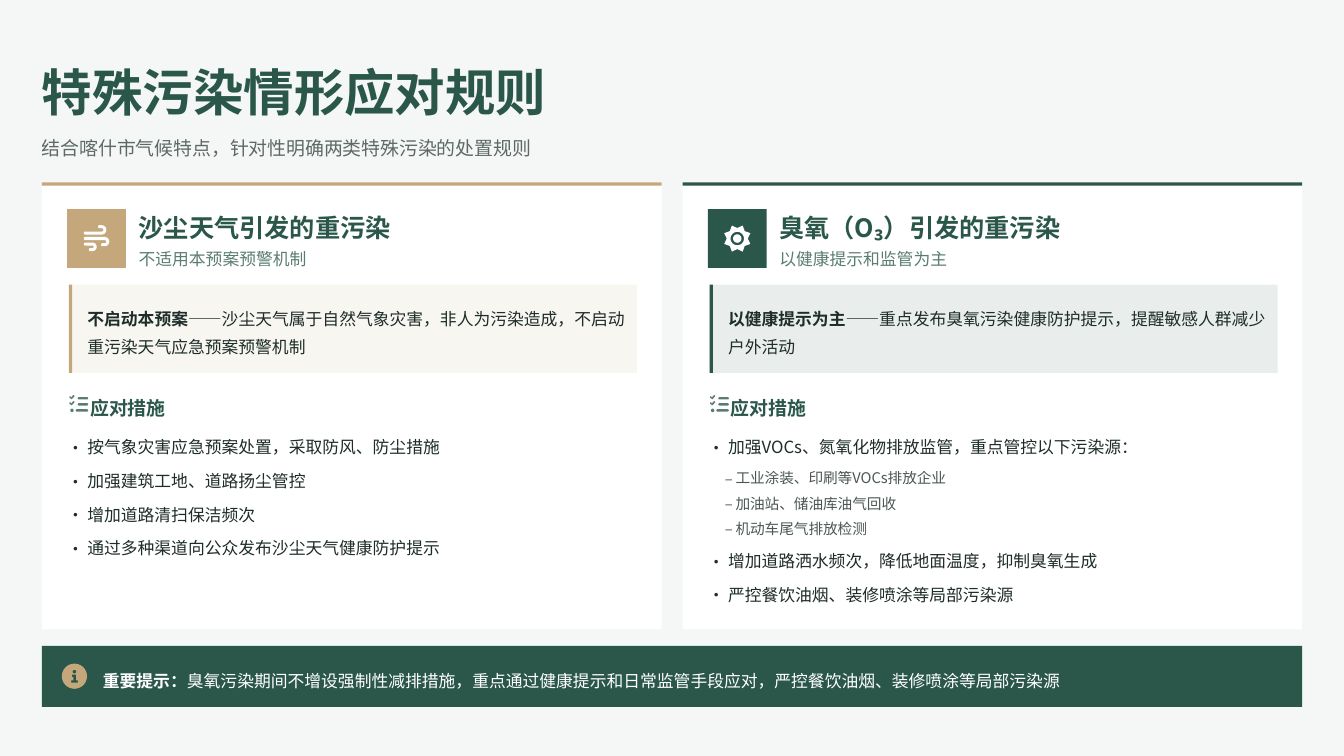
from math import atan2, cos, sin, pi, radians
from lxml.etree import SubElement
from pptx import Presentation
from pptx.dml.color import RGBColor
from pptx.enum.shapes import MSO_SHAPE
from pptx.enum.text import MSO_ANCHOR
from pptx.oxml.ns import qn
from pptx.util import Inches, Pt

PINE = RGBColor(0x2A, 0x57, 0x4A)
SAND = RGBColor(0xC4, 0xA8, 0x7C)
SAGE = RGBColor(0x5A, 0x7D, 0x6F)
INK = RGBColor(0x1E, 0x2D, 0x2A)
SLATE = RGBColor(0x4B, 0x57, 0x55)
WHITE = RGBColor(0xFF, 0xFF, 0xFF)
MIST = RGBColor(0xF4, 0xF7, 0xF5)
SANS = "Noto Sans CJK SC"
LATO = "Lato"

TITLE = "特殊污染情形应对规则"
LEAD = "结合喀什市气候特点，针对性明确两类特殊污染的处置规则"
STEPS = "应对措施"
CARDS = [
    dict(
        tint=SAND, icon="wind",
        head="沙尘天气引发的重污染", sub="不适用本预案预警机制",
        rule=("不启动本预案",
              "——沙尘天气属于自然气象灾害，非人为污染造成，不启动重污染天气应急预案预警机制"),
        list=[(0, "按气象灾害应急预案处置，采取防风、防尘措施"),
              (0, "加强建筑工地、道路扬尘管控"),
              (0, "增加道路清扫保洁频次"),
              (0, "通过多种渠道向公众发布沙尘天气健康防护提示")]),
    dict(
        tint=PINE, icon="sun",
        head="臭氧（O₃）引发的重污染", sub="以健康提示和监管为主",
        rule=("以健康提示为主",
              "——重点发布臭氧污染健康防护提示，提醒敏感人群减少户外活动"),
        list=[(0, "加强VOCs、氮氧化物排放监管，重点管控以下污染源："),
              (1, "工业涂装、印刷等VOCs排放企业"),
              (1, "加油站、储油库油气回收"),
              (1, "机动车尾气排放检测"),
              (0, "增加道路洒水频次，降低地面温度，抑制臭氧生成"),
              (0, "严控餐饮油烟、装修喷涂等局部污染源")]),
]
NOTE = ("重要提示：",
        "臭氧污染期间不增设强制性减排措施，重点通过健康提示和日常监管手段应对，严控餐饮油烟、装修喷涂等局部污染源")

LEVELS = [dict(mark="•", left=2.4, hang=2.4, size=12, line=18, gap=6, alpha=100, dot=INK),
          dict(mark="–", left=3.3, hang=1.28, size=10.5, line=15, gap=3, alpha=80, dot=SLATE)]

deck = Presentation()
deck.slide_width, deck.slide_height = Inches(13.33), Inches(7.5)
slide = deck.slides.add_slide(deck.slide_layouts[6])
slide.background.fill.solid()
slide.background.fill.fore_color.rgb = MIST
shapes = slide.shapes
EDGE, WIDE, GAP = 5, 150, 2.5
CARD = (WIDE - GAP) / 2


def cell(n):
    return Pt(n * 6)


def fade(node, alpha):
    if alpha < 100:
        hue = next(node.iter(qn("a:srgbClr")))
        SubElement(hue, qn("a:alpha")).set("val", str(alpha * 1000))


def paint(shape, color, alpha=100):
    shape.shadow.inherit = False
    shape.fill.solid()
    shape.fill.fore_color.rgb = color
    fade(shape._element.spPr, alpha)
    shape.line.fill.background()


def block(x, y, w, h, color, alpha=100):
    shape = shapes.add_shape(MSO_SHAPE.RECTANGLE, cell(x), cell(y), cell(w), cell(h))
    paint(shape, color, alpha)


def draw(x, y, loops, color):
    pen = None
    for loop in loops:
        dots = [(cell(x + a), cell(y + b)) for a, b in loop]
        if pen is None:
            pen = shapes.build_freeform(*dots[0], scale=1.0)
        else:
            pen.move_to(*dots[0])
        pen.add_line_segments(dots[1:], close=True)
    paint(pen.convert_to_shape(), color)


def polar(x, y, r, angle):
    return x + r * cos(angle), y + r * sin(angle)


def ring(x, y, r):
    return [polar(x, y, r, radians(a)) for a in range(0, 360, 15)]


def side(dots, half):
    edge = []
    for i, (x, y) in enumerate(dots):
        (a, b), (c, d) = dots[max(i - 1, 0)], dots[min(i + 1, len(dots) - 1)]
        turn = atan2(d - b, c - a)
        edge.append(polar(x, y, half, turn - pi / 2))
    return edge + [polar(x, y, half, turn + radians(t)) for t in range(-60, 61, 30)]


def ribbon(dots, half):
    return side(dots, half) + side(dots[::-1], half)


def style(run, size, color, bold=False, font=SANS, alpha=100):
    run.font.size, run.font.bold, run.font.name = Pt(size), bold, font
    run.font.color.rgb = color
    props = run._r.get_or_add_rPr()
    fade(props, alpha)
    SubElement(props, qn("a:ea")).set("typeface", SANS)


def frame(x, y, w, h, anchor=MSO_ANCHOR.MIDDLE):
    text = shapes.add_textbox(cell(x), cell(y), cell(w), cell(h)).text_frame
    text.margin_left = text.margin_right = text.margin_top = text.margin_bottom = 0
    text.word_wrap = True
    text.vertical_anchor = anchor
    return text


def write(x, y, w, h, parts, size, color, lead=1.3, **look):
    para = frame(x, y, w, h).paragraphs[0]
    para.line_spacing = lead
    for words, bold in parts:
        run = para.add_run()
        run.text = words
        style(run, size, color, bold, **look)


def bullets(x, y, w, h, items):
    text = frame(x, y, w, h, MSO_ANCHOR.TOP)
    last = None
    for level, words in items:
        form = LEVELS[level]
        para = text.paragraphs[0] if last is None else text.add_paragraph()
        props = para._p.get_or_add_pPr()
        props.set("marL", str(cell(form["left"])))
        props.set("indent", str(-cell(form["hang"])))
        tone = SubElement(props, qn("a:buClr"))
        SubElement(tone, qn("a:srgbClr")).set("val", str(form["dot"]))
        SubElement(props, qn("a:buFont")).set("typeface", SANS)
        SubElement(props, qn("a:buChar")).set("char", form["mark"])
        para.line_spacing = Pt(form["line"])
        if last is not None:
            para.space_before = Pt(form["gap"] if level == last else 6)
        run = para.add_run()
        run.text = words
        style(run, form["size"], INK, alpha=form["alpha"])
        last = level


def wind():
    loops = []
    for row, end, r in [(-0.65, 0.6, -0.38), (0, 0.96, 0.37), (0.66, -0.5, 0.33)]:
        hook = [(end + abs(r) * cos(radians(a)), row + r + r * sin(radians(a)))
                for a in range(-90, 91, 15)]
        loops.append(ribbon([(-1.35, row)] + hook + [(end - 0.25, row + 2 * r)], 0.18))
    return loops


def sun():
    rays = [polar(0, 0, 1.68 if i % 2 else 1.25, radians(i * 22.5)) for i in range(16)]
    return [rays, ring(0, 0, 0.8), ring(0, 0, 0.5)]


def checks():
    loops = [ring(0.32, 1.86, 0.2)]
    for row in range(3):
        mid = 0.42 + row * 0.72
        loops.append(ribbon([(0.9 if row == 2 else 1.14, mid), (2.11, mid)], 0.14))
        if row < 2:
            loops.append(ribbon([(0.1, mid - 0.14), (0.25, mid + 0.02), (0.52, mid - 0.28)], 0.1))
    return loops


def info():
    stem = [(-0.3, -0.2), (0.2, -0.2), (0.2, 0.5), (0.4, 0.5), (0.4, 0.78),
            (-0.4, 0.78), (-0.4, 0.5), (-0.12, 0.5), (-0.12, 0.1), (-0.3, 0.1)]
    return [ring(0, 0, 1.5), ring(0, -0.54, 0.22), stem]


ICONS = dict(wind=wind, sun=sun)

write(EDGE, 8.5, 153, 6, [(TITLE, True)], 36, PINE, 0.8)
write(EDGE, 15.5, 151, 3.5, [(LEAD, False)], 13.5, INK, alpha=70)

for i, card in enumerate(CARDS):
    x, tint = EDGE + i * (CARD + GAP), card["tint"]
    block(x, 21.7, CARD, 53.2, WHITE)
    block(x, 21.7, CARD, 0.4, tint)
    block(x + 3, 24.9, 7, 7, tint)
    draw(x + 6.5, 28.4, ICONS[card["icon"]](), WHITE)
    write(x + 11.5, 24.9, 55, 4, [(card["head"], True)], 18, PINE, 1.1)
    write(x + 11.5, 29, 55, 3, [(card["sub"], False)], 12, SAGE)
    block(x + 3.2, 33.9, 67.6, 10.5, tint, 10)
    block(x + 3.2, 33.9, 0.4, 10.5, tint)
    bold, rest = card["rule"]
    write(x + 5.4, 35.9, 64.4, 6.5, [(bold, True), (rest, False)], 12, INK, 1.4)
    draw(x + 3.25, 47, checks(), SAGE)
    write(x + 5.75, 46.4, 66, 3.5, [(STEPS, True)], 13.5, PINE, font=LATO)
    bullets(x + 3, 51.45, 68.75, 22, card["list"])

block(EDGE, 76.9, WIDE, 7.25, PINE)
draw(8.86, 80.5, info(), SAND)
write(12.25, 78.9, 115, 3.25, [(NOTE[0], True), (NOTE[1], False)], 12, WHITE, 1.4)

deck.save("out.pptx")
